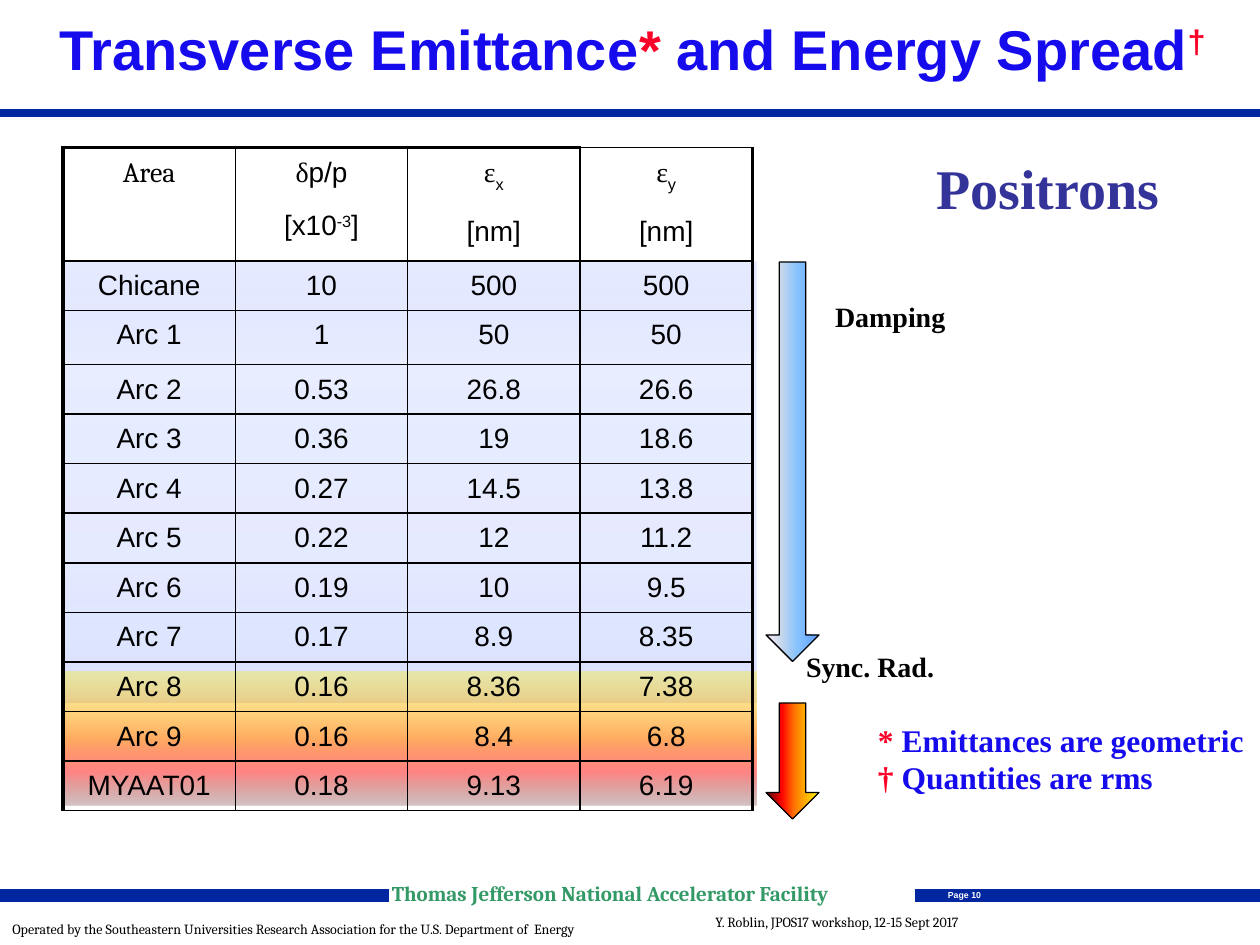
import pptx
import pptx.dml.color
import pptx.enum.shapes
import pptx.enum.text
import pptx.oxml
import pptx.oxml.ns
import pptx.util

SHAPE = pptx.enum.shapes.MSO_SHAPE
ALIGN = pptx.enum.text.PP_ALIGN
ANCHOR = pptx.enum.text.MSO_ANCHOR
NS = pptx.oxml.ns.nsdecls("a")

BLACK, WHITE = "000000", "FFFFFF"
BLUE, RED, NAVY = "160BED", "FC0128", "00279F"
SERIF = "Times New Roman"

AREAS = ["Chicane"] + [f"Arc {n}" for n in range(1, 10)] + ["MYAAT01"]
SPREADS = ["10", "1", "0.53", "0.36", "0.27", "0.22", "0.19", "0.17", "0.16", "0.16", "0.18"]
EMIT_X = ["500", "50", "26.8", "19", "14.5", "12", "10", "8.9", "8.36", "8.4", "9.13"]
EMIT_Y = ["500", "50", "26.6", "18.6", "13.8", "11.2", "9.5", "8.35", "7.38", "6.8", "6.19"]


def rgb(value):
    return pptx.dml.color.RGBColor.from_string(value)


def add_text(p, text, size=16, font="Arial", color=BLACK, bold=False, base=0):
    r = p.add_run()
    r.text = text
    r.font.size = pptx.util.Pt(size)
    r.font.name = font
    r.font.bold = bold
    r.font.color.rgb = rgb(color)
    if base:
        r._r.get_or_add_rPr().set("baseline", str(base * 1000))


class Deck:
    COLS, ROWS = 100, 75

    def __init__(self):
        self.prs = pptx.Presentation()
        self.prs.slide_width = pptx.util.Inches(10)
        self.prs.slide_height = pptx.util.Inches(7.5)
        self.s = self.prs.slides.add_slide(self.prs.slide_layouts[5])

    def x(self, cols):
        return round(self.prs.slide_width * cols / self.COLS)

    def y(self, rows):
        return round(self.prs.slide_height * rows / self.ROWS)

    def box(self, left, top, width, height):
        return self.x(left), self.y(top), self.x(width), self.y(height)

    def fill_frame(self, tf, lines, align=ALIGN.LEFT, spacing=1.0, gap=0, **fmt):
        for i, line in enumerate(lines):
            p = tf.add_paragraph() if i else tf.paragraphs[0]
            p.alignment = align
            p.line_spacing = spacing
            p.space_before = pptx.util.Pt(gap if i else 0)
            for text, extra in line:
                add_text(p, text, **{**fmt, **extra})

    def title(self, at, line, **fmt):
        sp = self.s.shapes.title
        sp.left, sp.top, sp.width, sp.height = self.box(*at)
        sp.text_frame.vertical_anchor = ANCHOR.MIDDLE
        sp.text_frame.auto_size = pptx.enum.text.MSO_AUTO_SIZE.NONE
        self.fill_frame(sp.text_frame, [line], align=ALIGN.CENTER, **fmt)

    def text(self, at, lines, wrap=False, inset=True, **fmt):
        tf = self.s.shapes.add_textbox(*self.box(*at)).text_frame
        tf.word_wrap = wrap
        if not inset:
            tf.margin_left = tf.margin_right = tf.margin_top = tf.margin_bottom = 0
        if isinstance(lines, str):
            lines = [[(lines, {})]]
        self.fill_frame(tf, lines, **fmt)

    def rule(self, start, end, row, weight):
        line = self.s.shapes.add_connector(
            pptx.enum.shapes.MSO_CONNECTOR.STRAIGHT,
            self.x(start), self.y(row), self.x(end), self.y(row))
        line.line.color.rgb = rgb(NAVY)
        line.line.width = pptx.util.Pt(weight)
        line._element.spPr.append(pptx.oxml.parse_xml(f"<a:effectLst {NS}/>"))

    def gradient_shape(self, kind, at, stops, angle, rotation=0, outline=None):
        sp = self.s.shapes.add_shape(kind, *self.box(*at))
        sp.shadow.inherit = False
        sp.rotation = rotation
        if outline:
            sp.line.color.rgb = rgb(outline)
            sp.line.width = pptx.util.Pt(0.75)
        else:
            sp.line.fill.background()
        marks = "".join(
            f'<a:gs pos="{pos * 1000}"><a:srgbClr val="{color}">'
            f'<a:alpha val="{alpha * 1000}"/></a:srgbClr></a:gs>'
            for pos, color, alpha in stops)
        geom = sp._element.spPr.find(pptx.oxml.ns.qn("a:prstGeom"))
        geom.addnext(pptx.oxml.parse_xml(
            f'<a:gradFill {NS} rotWithShape="1"><a:gsLst>{marks}</a:gsLst>'
            f'<a:lin ang="{angle * 60000}" scaled="0"/></a:gradFill>'))

    def arrow(self, left, top, width, length, stops):
        at = (left + (width - length) / 2, top + (length - width) / 2, length, width)
        self.gradient_shape(SHAPE.RIGHT_ARROW, at, stops, 90, rotation=90, outline=BLACK)

    def borders(self, cell, widths):
        tcPr = cell._tc.get_or_add_tcPr()
        for i, (side, width) in enumerate(zip("LRTB", widths)):
            tcPr.insert(i, pptx.oxml.parse_xml(
                f'<a:ln{side} {NS} w="{round(width * 12700)}"><a:solidFill>'
                f'<a:srgbClr val="{BLACK}"/></a:solidFill></a:ln{side}>'))

    def table(self, left, top, col_width, heights, rows):
        n = len(rows[0])
        at = self.box(left, top, col_width * n, sum(heights))
        table = self.s.shapes.add_table(len(rows), n, *at).table
        table.first_row = table.horz_banding = False
        for col in table.columns:
            col.width = self.x(col_width)
        for i, row in enumerate(rows):
            table.rows[i].height = self.y(heights[i])
            for j, lines in enumerate(row):
                cell = table.cell(i, j)
                cell.fill.background()
                first, last = j == 0, j == n - 1
                self.borders(cell, [2.25 if first else 1, 2.25 if last else 1,
                                    2.25 if i == 0 and not last else 1, 1])
                self.fill_frame(cell.text_frame, lines, align=ALIGN.CENTER,
                                spacing=1.1, gap=11)


def emittance_head(axis):
    return [[("ε", {"font": SERIF}), (axis, {"base": -30})], [("[nm]", {})]]


def main():
    deck = Deck()
    red, blue = {"color": RED}, {"color": BLUE}

    deck.rule(0, 100, 9, 4.5)
    for start, end in ((0, 30.9), (72.6, 100)):
        deck.rule(start, end, 71.1, 7.25)
    footer = dict(wrap=True, font="Cambria", size=8, spacing=0.6)
    deck.text((0, 73, 46.7, 1.8), "Operated by the Southeastern Universities Research "
              "Association for the U.S. Department of  Energy", **footer)
    deck.text((55.8, 72.5, 25, 1.8), "Y. Roblin, JPOS17 workshop, 12-15 Sept 2017", **footer)
    deck.text((31.1, 70.3, 41.7, 1.9), "Thomas Jefferson National Accelerator Facility",
              wrap=True, inset=False, font="Cambria", size=12, color="339966",
              bold=True, spacing=0.8)
    deck.text((74.2, 70.1, 4.7, 1.8), "Page 10", align=ALIGN.CENTER, size=5,
              color=WHITE, bold=True)

    deck.title((2.3, 0.2, 95.8, 8.1),
               [("Transverse Emittance", {}), ("*", red), (" and Energy Spread", {}),
                ("†", {"color": RED, "base": 30})],
               size=32, color=BLUE, bold=True, spacing=0.85)

    deck.gradient_shape(SHAPE.RECTANGLE, (5, 20.8, 55, 35),
                        [(0, "ACBEFF", 47), (35, "CCD6FF", 48),
                         (77, "CCD6FF", 44), (100, "E6EBFF", 100)], 270)
    deck.gradient_shape(SHAPE.RECTANGLE, (5, 53.3, 55, 10.6),
                        [(0, "FFF200", 33), (50, "FF7A00", 62),
                         (75, "FF0300", 48), (100, "4D0808", 24)], 90)

    head = [[[("Area", {"font": "Cambria"})]],
            [[("δ", {"font": SERIF}), ("p/p", {})],
             [("[x10", {}), ("-3", {"base": 30}), ("]", {})]],
            emittance_head("x"), emittance_head("y")]
    body = [[[[(value, {})]] for value in row]
            for row in zip(AREAS, SPREADS, EMIT_X, EMIT_Y)]
    deck.table(5, 11.7, 13.68, [9, 3.9, 4.3] + [3.9] * 9, [head] + body)

    deck.arrow(60.8, 20.8, 4.2, 31.7, [(0, "5E9EFF", 100), (40, "85C2FF", 100),
                                       (70, "C4D6EB", 100), (100, "FFEBFA", 100)])
    deck.arrow(60.8, 55.8, 4.2, 9.2, [(0, "FFF200", 100), (45, "FF7A00", 100),
                                      (70, "FF0300", 100), (100, "4D0808", 100)])

    label = dict(align=ALIGN.CENTER, font=SERIF, bold=True)
    deck.text((73.2, 11.7, 19.9, 6.4), "Positrons", size=32, color="333399", **label)
    deck.text((65.2, 23.3, 10.9, 3.7), "Damping", **label)
    deck.text((62.9, 51.1, 12.3, 3.7), "Sync. Rad.", **label)
    deck.text((68.7, 56.7, 31.3, 7),
              [[("* ", red), ("Emittances are geometric", blue)],
               [("† ", red), ("Quantities are rms", blue)]],
              size=18, font=SERIF, bold=True)

    deck.prs.save("out.pptx")


if __name__ == "__main__":
    main()
